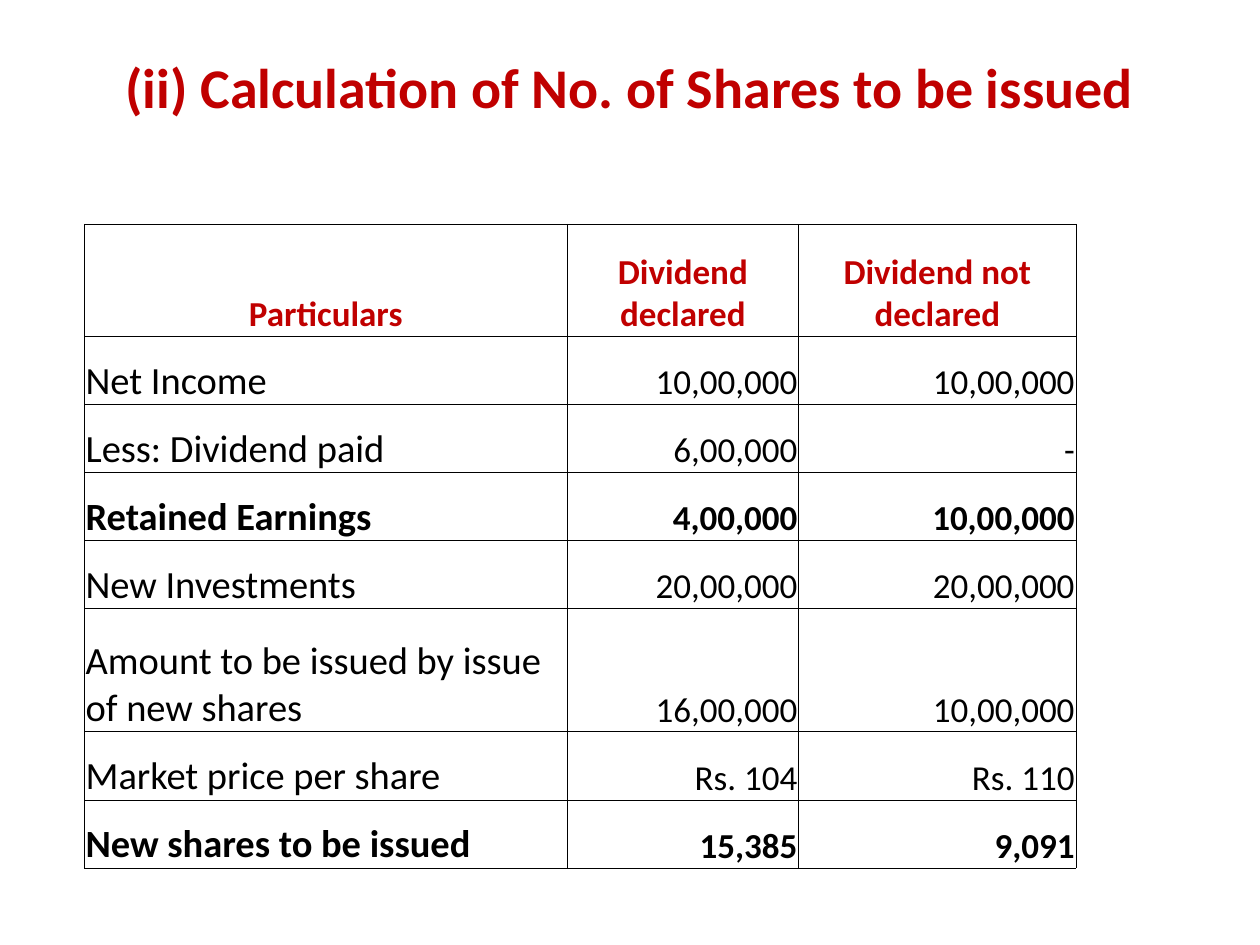
from pptx import Presentation
from pptx.dml.color import RGBColor
from pptx.enum.text import MSO_ANCHOR, PP_ALIGN
from pptx.oxml.ns import qn
from pptx.util import Inches, Pt
from lxml.etree import SubElement

RED = RGBColor(0xC0, 0x00, 0x00)
BLACK = RGBColor(0x00, 0x00, 0x00)
FONT = "Calibri"

COL_WIDTHS = [3.83, 1.84, 2.2]
ROW_HEIGHTS = [0.89, 0.54, 0.54, 0.54, 0.54, 0.98, 0.54, 0.54]
ROWS = [
    ("Particulars", "Dividend declared", "Dividend not declared"),
    ("Net Income", "10,00,000", "10,00,000"),
    ("Less: Dividend paid", "6,00,000", "-"),
    ("Retained Earnings", "4,00,000", "10,00,000"),
    ("New Investments", "20,00,000", "20,00,000"),
    ("Amount to be issued by issue of new shares", "16,00,000", "10,00,000"),
    ("Market price per share", "Rs. 104", "Rs. 110"),
    ("New shares to be issued", "15,385", "9,091"),
]
BOLD_ROWS = {"Particulars", "Retained Earnings", "New shares to be issued"}


def set_text(tf, text, size, color, bold, align):
    tf.text = text
    p = tf.paragraphs[0]
    p.alignment = align
    font = p.runs[0].font
    font.name, font.size, font.bold = FONT, Pt(size), bold
    font.color.rgb = color


def add_title(s, text):
    sp = s.shapes.add_textbox(Inches(0.5), Inches(0.3), Inches(9), Inches(1.25))
    tf = sp.text_frame
    tf.word_wrap = True
    tf.margin_top = Inches(0.12)
    set_text(tf, text, 32, RED, True, PP_ALIGN.CENTER)


def set_borders(cell):
    tc_pr = cell._tc.get_or_add_tcPr()
    # Border lines must come before the fill in the cell properties
    for i, side in enumerate(("a:lnL", "a:lnR", "a:lnT", "a:lnB")):
        ln = SubElement(tc_pr, qn(side), w=str(Pt(0.5)))
        fill = SubElement(ln, qn("a:solidFill"))
        SubElement(fill, qn("a:srgbClr"), val=str(BLACK))
        tc_pr.insert(i, ln)


def format_cell(cell):
    cell.fill.background()
    cell.vertical_anchor = MSO_ANCHOR.BOTTOM
    cell.margin_left = cell.margin_right = cell.margin_top = Inches(0.01)
    cell.margin_bottom = 0
    set_borders(cell)


def add_share_table(s):
    table = s.shapes.add_table(
        len(ROWS), len(COL_WIDTHS), Inches(0.67), Inches(1.78),
        Inches(sum(COL_WIDTHS)), Inches(sum(ROW_HEIGHTS))).table
    table.first_row = table.horz_banding = False
    for column, width in zip(table.columns, COL_WIDTHS):
        column.width = Inches(width)
    for row, height in zip(table.rows, ROW_HEIGHTS):
        row.height = Inches(height)

    for r, values in enumerate(ROWS):
        bold = values[0] in BOLD_ROWS
        for c, value in enumerate(values):
            cell = table.cell(r, c)
            format_cell(cell)
            if r == 0:
                size, color, align = 20, RED, PP_ALIGN.CENTER
            elif c == 0:
                size, color, align = 22, BLACK, PP_ALIGN.LEFT
            else:
                size, color, align = 20, BLACK, PP_ALIGN.RIGHT
            set_text(cell.text_frame, value, size, color, bold, align)


def main():
    prs = Presentation()
    prs.slide_width, prs.slide_height = Inches(10), Inches(7.5)
    s = prs.slides.add_slide(prs.slide_layouts[6])

    # Heading
    add_title(s, "(ii) Calculation of No. of Shares to be issued")

    # Comparison of both dividend cases
    add_share_table(s)

    prs.save("out.pptx")


if __name__ == "__main__":
    main()
